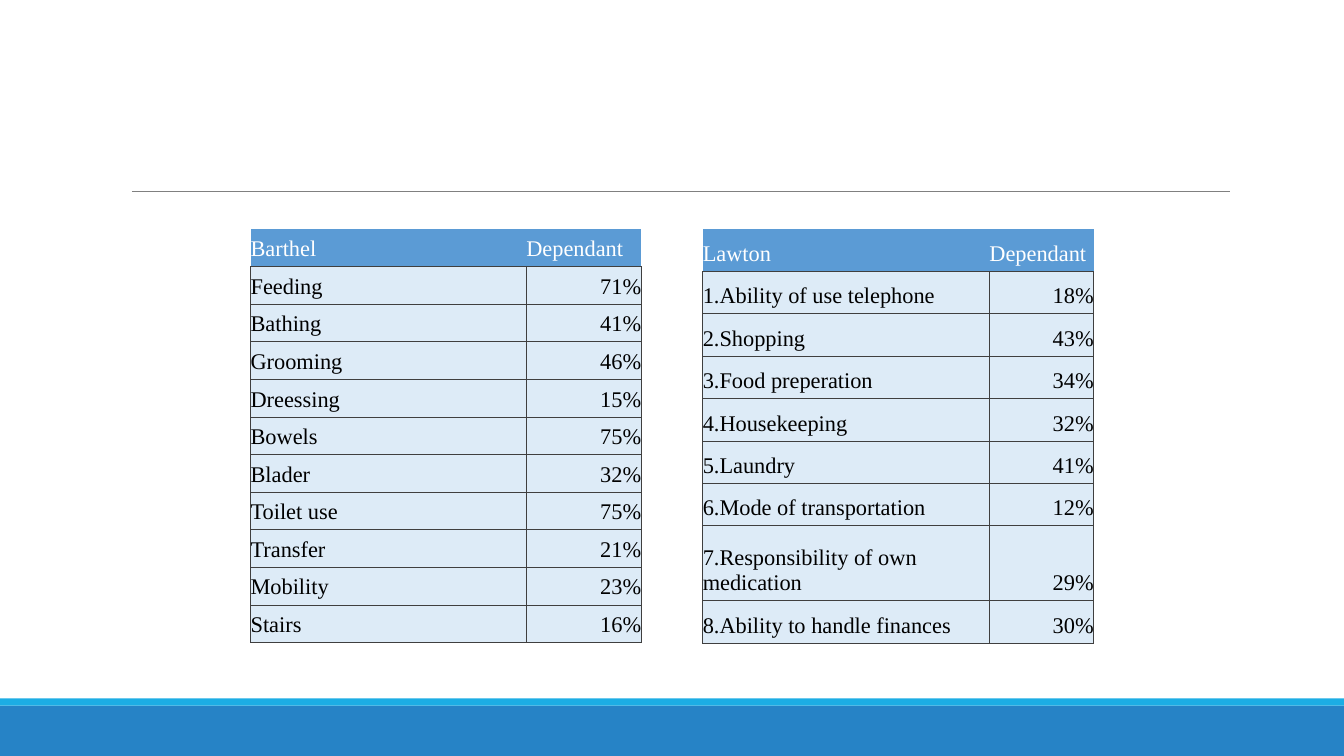
from lxml import etree
from pptx import Presentation
from pptx import util as u
from pptx.dml import color
from pptx.enum import shapes, text
from pptx.oxml import ns

BARTHEL = [
    ("Barthel", "Dependant"),
    ("Feeding", "71%"),
    ("Bathing", "41%"),
    ("Grooming", "46%"),
    ("Dreessing", "15%"),
    ("Bowels", "75%"),
    ("Blader", "32%"),
    ("Toilet use", "75%"),
    ("Transfer", "21%"),
    ("Mobility", "23%"),
    ("Stairs", "16%"),
]
LAWTON = [
    ("Lawton", "Dependant"),
    ("1.Ability of use telephone", "18%"),
    ("2.Shopping", "43%"),
    ("3.Food preperation", "34%"),
    ("4.Housekeeping", "32%"),
    ("5.Laundry", "41%"),
    ("6.Mode of transportation", "12%"),
    ("7.Responsibility of own medication", "29%"),
    ("8.Ability to handle finances", "30%"),
]


def paint(color_format, hex_string):
    color_format.rgb = color.RGBColor.from_string(hex_string)


def add_bar(slide, top, height, fill):
    bar = slide.shapes.add_shape(
        shapes.MSO_SHAPE.RECTANGLE, 0, u.Pt(top), u.Pt(960), u.Pt(height))
    bar.shadow.inherit = False
    bar.fill.solid()
    paint(bar.fill.fore_color, fill)
    bar.line.fill.background()


def add_rule(slide, left, right, top):
    rule = slide.shapes.add_connector(
        shapes.MSO_CONNECTOR.STRAIGHT, u.Pt(left), u.Pt(top), u.Pt(right), u.Pt(top))
    paint(rule.line.color, "808080")
    rule.line.width = u.Pt(0.5)
    etree.SubElement(rule._element.spPr, ns.qn("a:effectLst"))


def set_borders(cell, visible_sides):
    properties = cell._tc.get_or_add_tcPr()
    for side in "LRTB":
        line = etree.SubElement(properties, ns.qn("a:ln" + side), w=str(u.Pt(0.5)))
        if side in visible_sides:
            fill = etree.SubElement(line, ns.qn("a:solidFill"))
            etree.SubElement(fill, ns.qn("a:srgbClr"), val="3F3F3F")
        else:
            etree.SubElement(line, ns.qn("a:noFill"))


def fill_cell(cell, wording, is_header, is_value):
    set_borders(cell, "B" if is_header else "LRTB")
    cell.fill.solid()
    paint(cell.fill.fore_color, "5B9BD5" if is_header else "DDEBF7")
    cell.margin_left = cell.margin_top = cell.margin_right = 0
    cell.margin_bottom = u.Pt(3.6)
    cell.vertical_anchor = text.MSO_ANCHOR.BOTTOM
    cell.text_frame.text = wording
    paragraph = cell.text_frame.paragraphs[0]
    if is_value and not is_header:
        paragraph.alignment = text.PP_ALIGN.RIGHT
    font = paragraph.runs[0].font
    font.name = "Times New Roman"
    font.size = u.Pt(16)
    font.bold = False
    paint(font.color, "FFFFFF" if is_header else "000000")


def add_score_table(slide, left, column_widths, row_heights, rows):
    frame = slide.shapes.add_table(
        len(rows), len(column_widths), u.Pt(left), u.Pt(163.6),
        u.Pt(sum(column_widths)), u.Pt(sum(row_heights)))
    table = frame.table
    table.first_row = table.horz_banding = False
    for column, width in zip(table.columns, column_widths):
        column.width = u.Pt(width)
    for row, height in zip(table.rows, row_heights):
        row.height = u.Pt(height)
    for row_index, row in enumerate(rows):
        for column_index, wording in enumerate(row):
            fill_cell(table.cell(row_index, column_index), wording,
                      row_index == 0, column_index == 1)


def main():
    presentation = Presentation()
    presentation.slide_width = u.Pt(960)
    presentation.slide_height = u.Pt(540)
    slide = presentation.slides.add_slide(presentation.slide_layouts[6])
    add_bar(slide, 504, 36, "2683C6")
    add_bar(slide, 498.8, 5.2, "1CADE4")
    add_rule(slide, 94.3, 878.8, 136.6)
    add_score_table(slide, 502, [204.8, 74.4], [30.3] * 7 + [53.6, 30.3], LAWTON)
    add_score_table(slide, 179, [197, 82], [26.85] * 11, BARTHEL)
    presentation.save("out.pptx")


if __name__ == "__main__":
    main()
